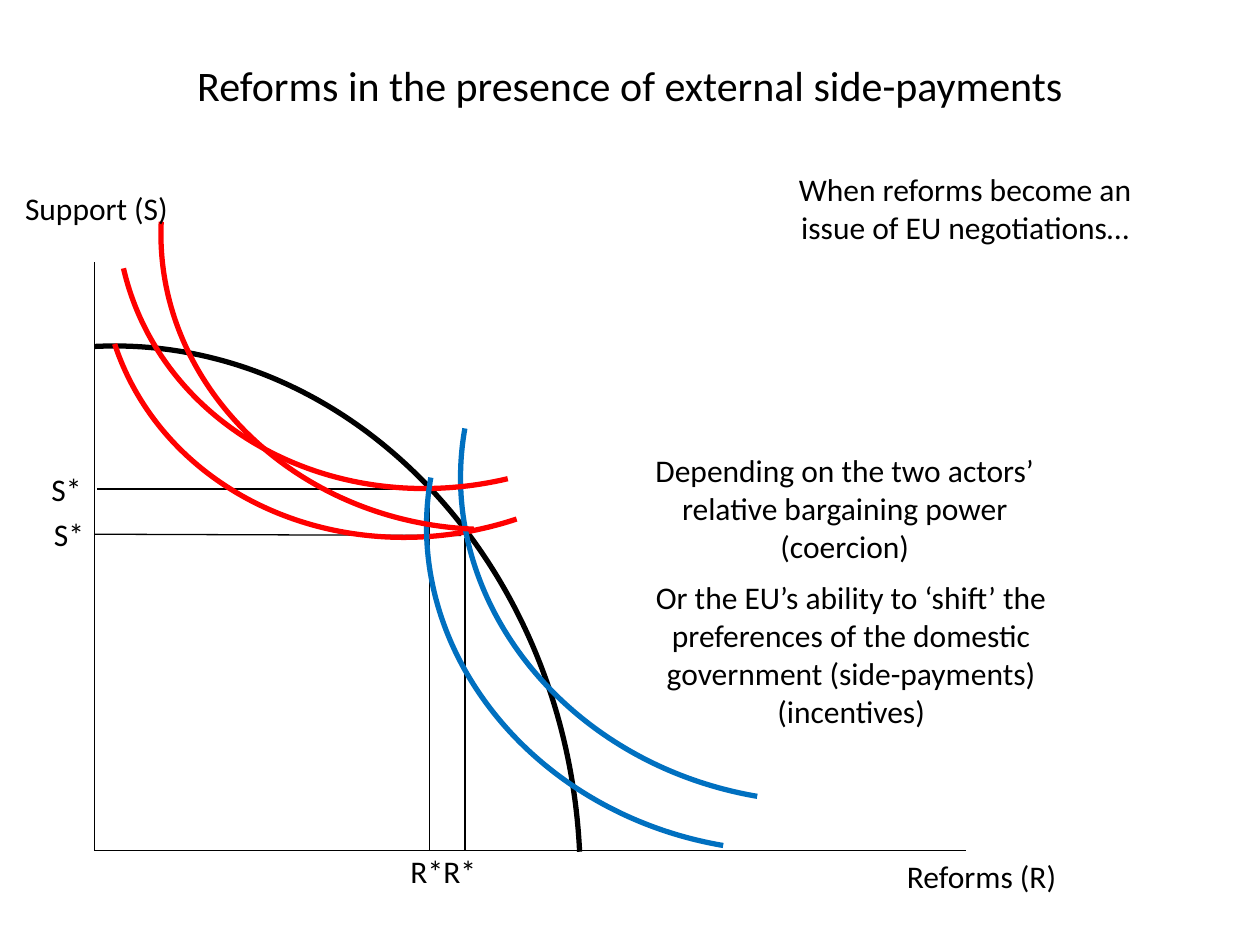
"""Build a slide on reforms in the presence of external side-payments."""
from lxml import etree
from pptx import Presentation
from pptx.dml.color import RGBColor
from pptx.enum.shapes import MSO_CONNECTOR
from pptx.enum.text import MSO_ANCHOR, MSO_AUTO_SIZE, PP_ALIGN
from pptx.oxml.ns import qn
from pptx.util import Inches, Pt

BLACK = RGBColor(0x00, 0x00, 0x00)
RED = RGBColor(0xFF, 0x00, 0x00)
BLUE = RGBColor(0x00, 0x70, 0xC0)
FONT = "Calibri"
STRAIGHT = MSO_CONNECTOR.STRAIGHT
MIDDLE = MSO_ANCHOR.MIDDLE
GROW = MSO_AUTO_SIZE.SHAPE_TO_FIT_TEXT
LEFT, CENTER = PP_ALIGN.LEFT, PP_ALIGN.CENTER

TITLE = "Reforms in the presence of external side-payments"
ORIGIN_X, ORIGIN_Y = 0.75, 6.75
AXES = [
    (ORIGIN_X, 2.08, ORIGIN_X, ORIGIN_Y),
    (ORIGIN_X, ORIGIN_Y, 7.67, ORIGIN_Y),
]
GUIDES = [
    (3.69, 4.27, 3.69, ORIGIN_Y),
    (3.66, 4.25, ORIGIN_X, 4.24),
    (3.41, 3.88, 3.41, ORIGIN_Y),
    (3.41, 3.88, 0.77, 3.88),
]
CURVES = [
    (BLACK, [(4.6, 6.76), (4.49, 4.44), (2.76, 2.65), (0.75, 2.75)]),
    (RED, [(0.91, 2.73), (1.31, 3.94), (2.74, 4.57), (4.1, 4.12)]),
    (BLUE, [(3.69, 3.4), (3.45, 4.75), (4.49, 6.06), (6.01, 6.32)]),
    (RED, [(0.98, 2.13), (1.27, 3.38), (2.63, 4.13), (4.03, 3.8)]),
    (BLUE, [(3.42, 3.79), (3.18, 5.14), (4.22, 6.45), (5.74, 6.71)]),
    (RED, [(1.28, 1.76), (1.22, 3.04), (2.33, 4.14), (3.76, 4.2)]),
]
LABELS = [
    ("Reforms (R)", 7.1, 6.75, 1.4),
    ("Support (S)", 0.1, 1.45, 1.38),
    ("R*", 3.42, 6.71, 0.46),
    ("S*", 0.33, 4.04, 0.44),
    ("R*", 3.16, 6.71, 0.46),
    ("S*", 0.31, 3.68, 0.44),
]
NOTES = [
    (["When reforms become an issue of EU negotiations…"], 6.09, 1.3, 3.14, 0.71),
    (["Depending on the two actors’ relative bargaining power (coercion)"],
     4.87, 3.53, 3.67, 1.01),
    (["Or the EU’s ability to ‘shift’ the preferences of the domestic "
      "government (side-payments)", "(incentives)"], 4.92, 4.54, 3.67, 1.31),
]


def add_run(p, text, size):
    """Add one formatted run to a paragraph."""
    r = p.add_run()
    r.text = text
    r.font.name = FONT
    r.font.size = Pt(size)
    r.font.color.rgb = BLACK


def set_title(slide):
    """Place and fill the title placeholder."""
    sp = slide.shapes.title
    sp.left, sp.top = Inches(0.5), Inches(0.05)
    sp.width, sp.height = Inches(9), Inches(1.25)
    tf = sp.text_frame
    tf.vertical_anchor = MIDDLE
    p = tf.paragraphs[0]
    p.alignment = CENTER
    add_run(p, TITLE, 24)


def add_text(slide, lines, x, y, w, h, align=CENTER, wrap=True):
    """Add a text box whose lines share one paragraph."""
    sp = slide.shapes.add_textbox(Inches(x), Inches(y), Inches(w), Inches(h))
    tf = sp.text_frame
    tf.word_wrap = wrap
    tf.auto_size = GROW
    p = tf.paragraphs[0]
    p.alignment = align
    for i, line in enumerate(lines):
        if i:
            p.add_line_break()
        add_run(p, line, 18)


def add_line(slide, x1, y1, x2, y2):
    """Add a thin straight line without a shadow."""
    line = slide.shapes.add_connector(
        STRAIGHT, Inches(x1), Inches(y1), Inches(x2), Inches(y2))
    line.line.color.rgb = BLACK
    line.line.width = Pt(0.75)
    etree.SubElement(line.element.spPr, qn("a:effectLst"))


def add_curve(slide, color, points):
    """Add an open cubic Bezier curve through its four control points."""
    start, *rest = [(Inches(x), Inches(y)) for x, y in points]
    builder = slide.shapes.build_freeform(*start)
    builder.add_line_segments(rest, close=False)
    sp = builder.convert_to_shape()
    path = next(sp.element.iter(qn("a:path")))
    segments = path.findall(qn("a:lnTo"))
    bezier = etree.SubElement(path, qn("a:cubicBezTo"))
    for segment in segments:
        bezier.append(segment[0])
        path.remove(segment)
    sp.fill.background()
    sp.line.color.rgb = color
    sp.line.width = Pt(3)
    sp.shadow.inherit = False


def main():
    """Build and save the slide."""
    prs = Presentation()
    prs.slide_width, prs.slide_height = Inches(10), Inches(7.5)
    slide = prs.slides.add_slide(prs.slide_layouts[5])
    set_title(slide)
    for ends in AXES + GUIDES:
        add_line(slide, *ends)
    for color, points in CURVES:
        add_curve(slide, color, points)
    for text, x, y, w in LABELS:
        add_text(slide, [text], x, y, w, 0.4, LEFT, False)
    for lines, *box in NOTES:
        add_text(slide, lines, *box)
    prs.save("out.pptx")


if __name__ == "__main__":
    main()
